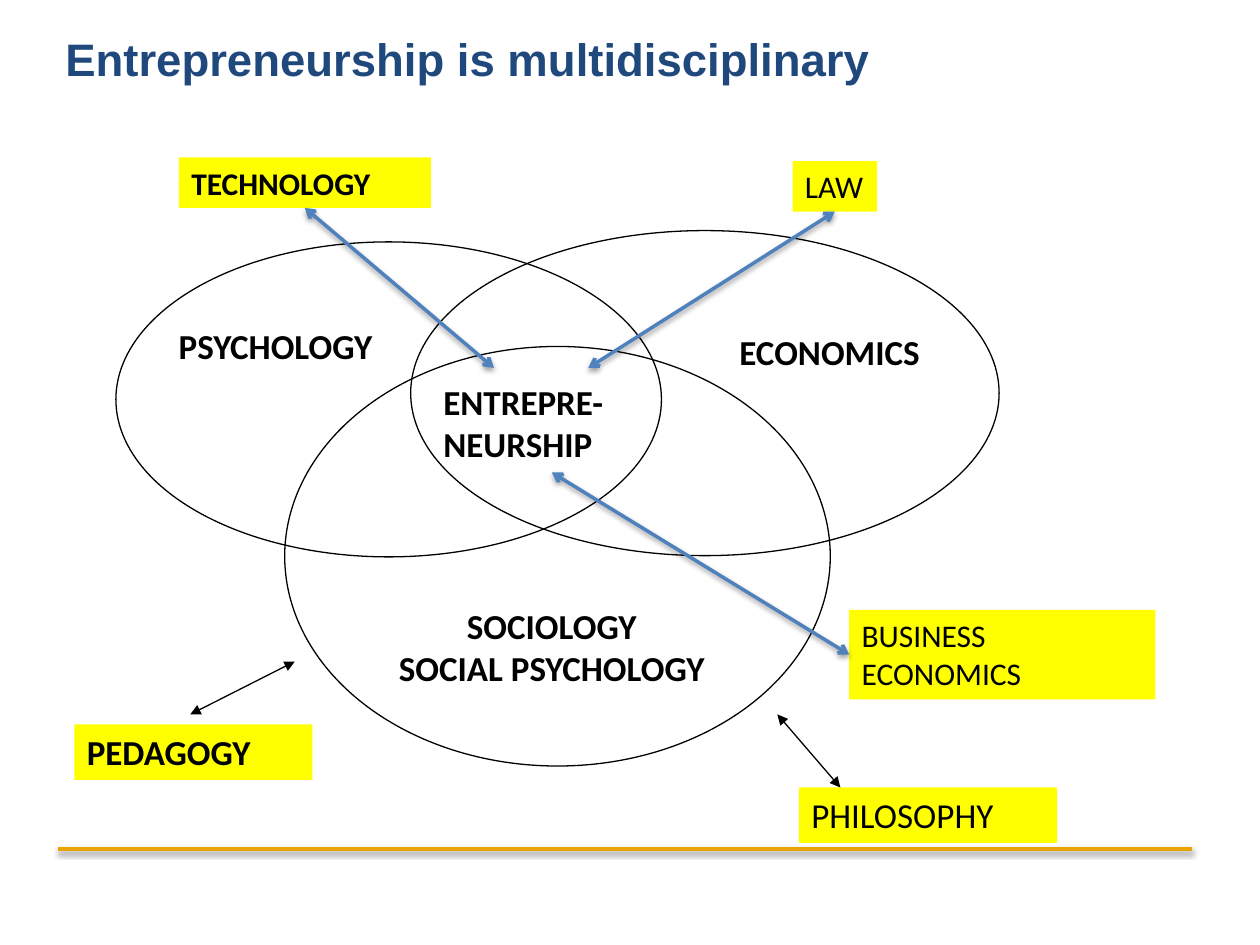
from dataclasses import dataclass

from lxml import etree
from pptx import Presentation
from pptx.dml.color import RGBColor
from pptx.enum.shapes import MSO_CONNECTOR, MSO_SHAPE
from pptx.enum.text import MSO_ANCHOR, MSO_AUTO_SIZE, PP_ALIGN
from pptx.oxml.ns import qn
from pptx.util import Inches, Pt

STRAIGHT = MSO_CONNECTOR.STRAIGHT
OVAL = MSO_SHAPE.OVAL
RECTANGLE = MSO_SHAPE.RECTANGLE
MIDDLE, TOP = MSO_ANCHOR.MIDDLE, MSO_ANCHOR.TOP
GROW, FIXED = MSO_AUTO_SIZE.SHAPE_TO_FIT_TEXT, MSO_AUTO_SIZE.NONE
LEFT, CENTER = PP_ALIGN.LEFT, PP_ALIGN.CENTER
LEFT_SIDE, BOTTOM_SIDE = 1, 2


@dataclass(frozen=True)
class Theme:
    ink: str = "000000"
    title: str = "1F497D"
    tag: str = "FFFF00"
    accent: str = "4F81BD"
    rule: str = "E9A400"
    title_font: str = "Arial"
    body_font: str = "Calibri"
    title_size: int = 26
    large: int = 20
    small: int = 18
    thin: float = 0.75
    thick: float = 2


class VennSlide:
    """Holds the theme and the current page, and draws each kind of element."""

    def __init__(self, page, theme):
        self.page = page
        self.theme = theme

    def add_lines(self, box, lines, size, bold, color, font, align=LEFT):
        frame = box.text_frame
        for index, line in enumerate(lines):
            para = frame.add_paragraph() if index else frame.paragraphs[0]
            para.alignment = align
            span = para.add_run()
            span.text = line
            span.font.name = font
            span.font.size = Pt(size)
            span.font.bold = bold
            span.font.color.rgb = RGBColor.from_string(color)

    def title(self, text, *place):
        box = self.page.shapes.add_textbox(*map(Inches, place))
        box.text_frame.word_wrap = True
        box.text_frame.vertical_anchor = MIDDLE
        box.text_frame.auto_size = FIXED
        self.add_lines(box, [text], self.theme.title_size, True, self.theme.title, self.theme.title_font)

    def label(self, lines, *place, align=LEFT):
        box = self.page.shapes.add_textbox(*map(Inches, place))
        box.text_frame.word_wrap = False
        box.text_frame.auto_size = GROW
        self.add_lines(box, lines, self.theme.large, True, self.theme.ink, self.theme.body_font, align)

    def field(self, *place):
        oval = self.page.shapes.add_shape(OVAL, *map(Inches, place))
        oval.shadow.inherit = False
        oval.fill.background()
        oval.line.color.rgb = RGBColor.from_string(self.theme.ink)
        oval.line.width = Pt(self.theme.thin)

    def tag(self, text, *place, size, bold=False, wrap=True):
        box = self.page.shapes.add_shape(RECTANGLE, *map(Inches, place))
        box.shadow.inherit = False
        box.fill.solid()
        box.fill.fore_color.rgb = RGBColor.from_string(self.theme.tag)
        box.line.fill.background()
        box.text_frame.word_wrap = wrap
        box.text_frame.vertical_anchor = TOP
        box.text_frame.auto_size = GROW
        self.add_lines(box, [text], size, bold, self.theme.ink, self.theme.body_font)
        return box

    def line(self, start, end, color, width, head=None, shadow=False):
        link = self.page.shapes.add_connector(STRAIGHT, *map(Inches, (*start, *end)))
        link.line.color.rgb = RGBColor.from_string(color)
        link.line.width = Pt(width)
        properties = link._element.spPr
        if head:
            outline = properties.find(qn("a:ln"))
            for tip in ("a:headEnd", "a:tailEnd"):
                etree.SubElement(outline, qn(tip), type=head)
        effects = etree.SubElement(properties, qn("a:effectLst"))
        if shadow:
            cast = etree.SubElement(effects, qn("a:outerShdw"), blurRad="40000", dist="20000",
                                    dir="5400000", rotWithShape="0")
            tint = etree.SubElement(cast, qn("a:srgbClr"), val=self.theme.ink)
            etree.SubElement(tint, qn("a:alpha"), val="38000")
        return link

    def thin_arrow(self, start, end):
        self.line(start, end, self.theme.ink, self.theme.thin, "triangle")

    def bold_arrow(self, box, side, start, end):
        link = self.line(start, end, self.theme.accent, self.theme.thick, "arrow", True)
        link.begin_connect(box, side)


def main():
    deck = Presentation()
    deck.slide_width, deck.slide_height = Inches(10), Inches(7.5)
    theme = Theme()
    venn = VennSlide(deck.slides.add_slide(deck.slide_layouts[6]), theme)

    venn.line((0.46, 6.74), (9.46, 6.74), theme.rule, theme.thick, shadow=True)
    venn.title("Entrepreneurship is multidisciplinary", 0.42, 0.17, 9, 0.59)

    venn.field(0.92, 1.92, 4.33, 2.5)
    venn.field(3.26, 1.83, 4.67, 2.58)
    venn.field(2.26, 2.75, 4.33, 3.33)

    venn.label(["PSYCHOLOGY"], 1.32, 2.53, 1.75, 0.44)
    venn.label(["ECONOMICS"], 5.77, 2.57, 1.65, 0.44)
    venn.label(["SOCIOLOGY", "SOCIAL PSYCHOLOGY"], 2.72, 4.75, 3.32, 0.77, align=CENTER)
    venn.label(["ENTREPRE-", "NEURSHIP"], 3.42, 2.97, 1.49, 0.77)

    venn.thin_arrow((2.34, 5.25), (1.51, 5.67))
    venn.tag("PEDAGOGY", 0.59, 5.75, 1.89, 0.44, size=theme.large, bold=True)
    venn.tag("PHILOSOPHY", 6.34, 6.25, 2.05, 0.44, size=theme.large)
    venn.thin_arrow((6.17, 5.67), (6.67, 6.25))

    business = venn.tag("BUSINESS ECONOMICS", 6.74, 4.84, 2.43, 0.71, size=theme.small)
    law = venn.tag("LAW", 6.29, 1.28, 0.67, 0.4, size=theme.small, wrap=False)
    technology = venn.tag("TECHNOLOGY", 1.42, 1.25, 2, 0.4, size=theme.small, bold=True)

    venn.bold_arrow(law, BOTTOM_SIDE, (6.62, 1.68), (4.67, 2.92))
    venn.bold_arrow(technology, BOTTOM_SIDE, (2.42, 1.65), (3.92, 2.92))
    venn.bold_arrow(business, LEFT_SIDE, (6.74, 5.19), (4.38, 3.75))

    deck.save("out.pptx")


if __name__ == "__main__":
    main()
